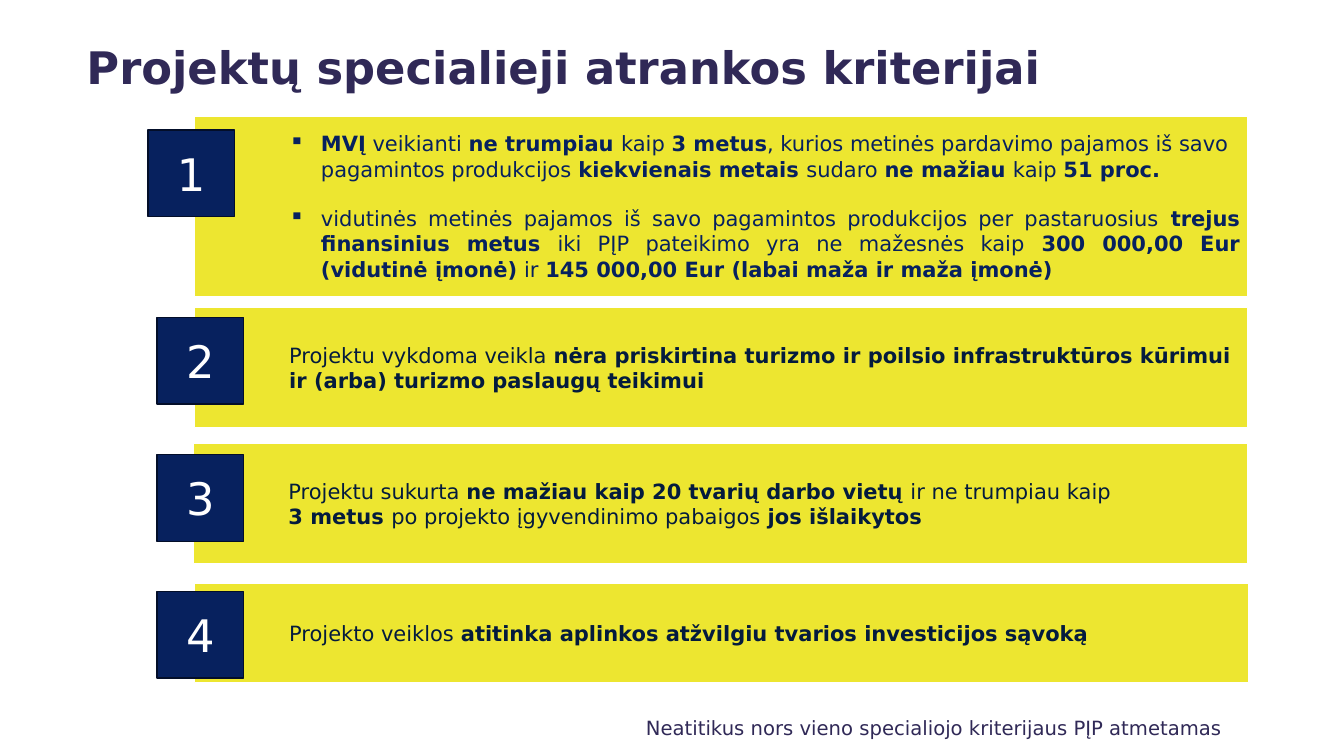
from dataclasses import dataclass

from lxml.etree import SubElement
from pptx import Presentation
from pptx.dml.color import RGBColor
from pptx.enum.shapes import MSO_SHAPE
from pptx.enum.text import MSO_ANCHOR, PP_ALIGN
from pptx.oxml.ns import qn
from pptx.shapes.autoshape import Shape
from pptx.slide import Slide
from pptx.text.text import _Paragraph
from pptx.util import Cm, Pt


@dataclass(frozen=True)
class Theme:
    font: str = "DejaVu Sans"
    heading: RGBColor = RGBColor(0x30, 0x29, 0x57)
    navy: RGBColor = RGBColor(0x07, 0x21, 0x5E)
    navy_edge: RGBColor = RGBColor(0x03, 0x0E, 0x29)
    body: RGBColor = RGBColor(0x04, 0x1B, 0x3D)
    yellow: RGBColor = RGBColor(0xED, 0xE6, 0x30)
    white: RGBColor = RGBColor(0xFF, 0xFF, 0xFF)
    title_size: float = 32
    body_size: float = 15
    note_size: float = 14


@dataclass(frozen=True)
class Box:
    """A rectangle in centimetres."""
    left: float
    top: float
    width: float
    height: float


@dataclass(frozen=True)
class Line:
    """A paragraph; the parts between ** marks are bold."""
    text: str
    align: PP_ALIGN = PP_ALIGN.LEFT


@dataclass(frozen=True)
class Criterion:
    bar: Box
    badge_left: float
    badge_top: float
    lines: tuple[Line, ...]
    colour: RGBColor
    bulleted: bool = False


THEME = Theme()
BADGE_SIDE = 2.18
BULLET_INDENT = 0.8
BULLET_GAP = 17.5

CRITERIA = (
    Criterion(
        Box(4.9, 2.92, 26.54, 4.55), 3.73, 3.28,
        (
            Line("**MVĮ** veikianti **ne trumpiau **kaip **3 metus**, kurios metinės "
                 "pardavimo pajamos iš savo pagamintos produkcijos **kiekvienais "
                 "metais **sudaro **ne mažiau **kaip **51 proc.**"),
            Line("vidutinės metinės pajamos iš savo pagamintos produkcijos per "
                 "pastaruosius **trejus finansinius metus **iki PĮP pateikimo yra ne "
                 "mažesnės kaip **300 000,00 Eur (vidutinė įmonė)** ir "
                 "**145 000,00 Eur (labai maža ir maža įmonė)**", PP_ALIGN.JUSTIFY),
        ),
        THEME.navy, bulleted=True,
    ),
    Criterion(
        Box(4.9, 7.75, 26.54, 3.02), 3.96, 8.0,
        (Line("Projektu vykdoma veikla **nėra priskirtina turizmo ir poilsio "
              "infrastruktūros kūrimui ir (arba) turizmo paslaugų teikimui**"),),
        THEME.body,
    ),
    Criterion(
        Box(4.88, 11.18, 26.56, 3.02), 3.96, 11.46,
        (
            Line("Projektu sukurta **ne mažiau kaip 20 tvarių darbo vietų **ir ne "
                 "trumpiau kaip"),
            Line("**3 metus **po projekto įgyvendinimo pabaigos **jos išlaikytos**"),
        ),
        THEME.body,
    ),
    Criterion(
        Box(4.9, 14.71, 26.56, 2.49), 3.96, 14.91,
        (Line("Projekto veiklos **atitinka aplinkos atžvilgiu tvarios investicijos "
              "sąvoką**"),),
        THEME.body,
    ),
)


def set_font(paragraph: _Paragraph, size: float, colour: RGBColor) -> None:
    paragraph.font.name = THEME.font
    paragraph.font.size = Pt(size)
    paragraph.font.color.rgb = colour


def add_bullet(paragraph: _Paragraph) -> None:
    properties = paragraph._p.get_or_add_pPr()
    properties.set("marL", str(Cm(BULLET_INDENT)))
    properties.set("indent", str(-Cm(BULLET_INDENT)))
    SubElement(properties, qn("a:buChar")).set("char", "▪")


def add_rectangle(slide: Slide, box: Box, fill: RGBColor, edge: RGBColor) -> Shape:
    rectangle = slide.shapes.add_shape(
        MSO_SHAPE.RECTANGLE, Cm(box.left), Cm(box.top), Cm(box.width), Cm(box.height))
    rectangle.shadow.inherit = False
    rectangle.fill.solid()
    rectangle.fill.fore_color.rgb = fill
    rectangle.line.color.rgb = edge
    rectangle.line.width = Pt(1)
    rectangle.text_frame.word_wrap = True
    rectangle.text_frame.vertical_anchor = MSO_ANCHOR.MIDDLE
    return rectangle


def add_label(slide: Slide, box: Box, text: str, size: float, bold: bool,
              anchor: MSO_ANCHOR) -> None:
    frame = slide.shapes.add_textbox(
        Cm(box.left), Cm(box.top), Cm(box.width), Cm(box.height)).text_frame
    frame.word_wrap = True
    frame.vertical_anchor = anchor
    paragraph = frame.paragraphs[0]
    paragraph.text = text
    set_font(paragraph, size, THEME.heading)
    paragraph.font.bold = bold


def add_bar(slide: Slide, criterion: Criterion) -> None:
    frame = add_rectangle(slide, criterion.bar, THEME.yellow, THEME.white).text_frame
    frame.margin_left = Cm(2.39)
    frame.margin_top = frame.margin_right = frame.margin_bottom = Cm(0.19)
    for index, line in enumerate(criterion.lines):
        paragraph = frame.add_paragraph() if index else frame.paragraphs[0]
        paragraph.alignment = line.align
        if criterion.bulleted:
            if index:
                paragraph.space_before = Pt(BULLET_GAP)
            add_bullet(paragraph)
        set_font(paragraph, THEME.body_size, criterion.colour)
        for position, part in enumerate(line.text.split("**")):
            if part:
                run = paragraph.add_run()
                run.text = part
                run.font.bold = position % 2 == 1


def add_badge(slide: Slide, criterion: Criterion, number: int) -> None:
    box = Box(criterion.badge_left, criterion.badge_top, BADGE_SIDE, BADGE_SIDE)
    badge = add_rectangle(slide, box, THEME.navy, THEME.navy_edge)
    paragraph = badge.text_frame.paragraphs[0]
    paragraph.text = str(number)
    paragraph.alignment = PP_ALIGN.CENTER
    set_font(paragraph, THEME.title_size, THEME.white)


def main() -> None:
    presentation = Presentation()
    presentation.slide_width = Cm(33.87)
    presentation.slide_height = Cm(19.05)
    slide = presentation.slides.add_slide(presentation.slide_layouts[6])

    add_label(slide, Box(1.93, 0.66, 25.86, 2.03),
              "Projektų specialieji atrankos kriterijai",
              THEME.title_size, True, MSO_ANCHOR.MIDDLE)
    for number, criterion in enumerate(CRITERIA, start=1):
        add_bar(slide, criterion)
        add_badge(slide, criterion, number)
    add_label(slide, Box(16.03, 17.91, 19.74, 0.86),
              "Neatitikus nors vieno specialiojo kriterijaus PĮP atmetamas",
              THEME.note_size, False, MSO_ANCHOR.TOP)

    presentation.save("out.pptx")


if __name__ == "__main__":
    main()
